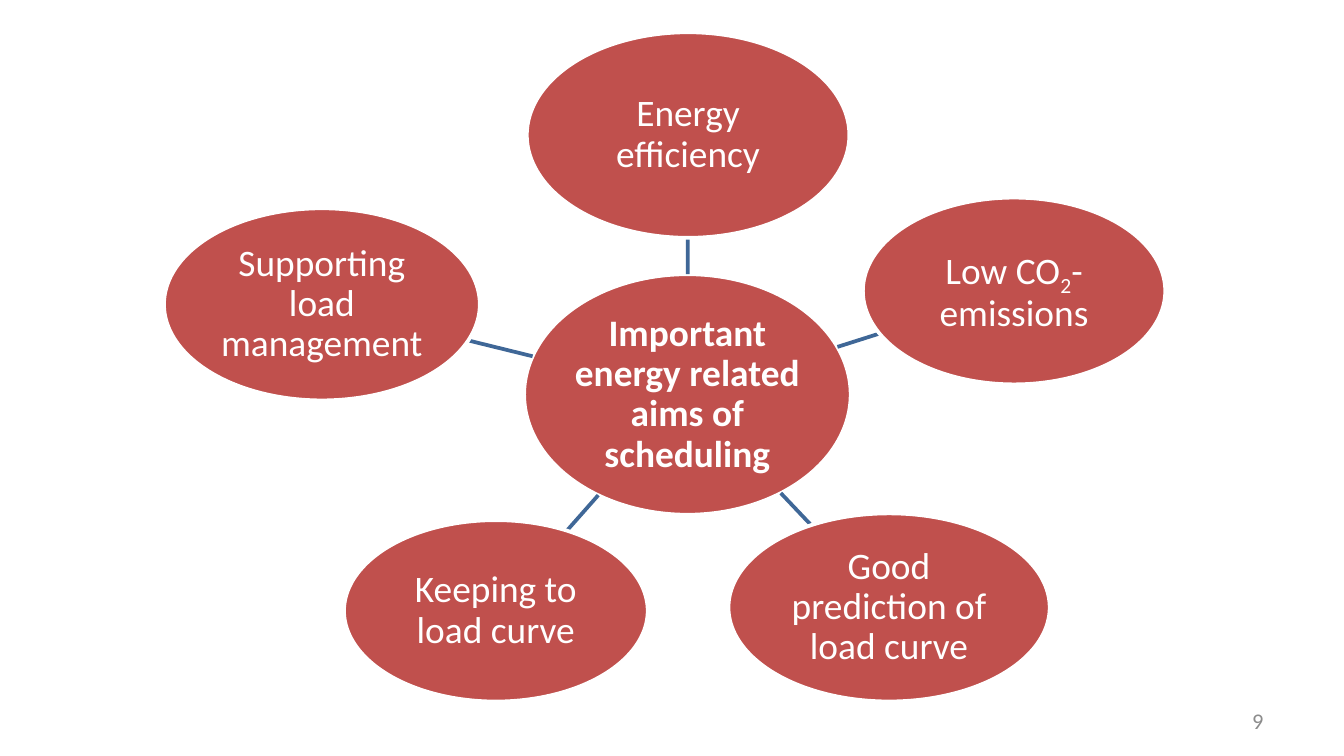
import math

import pptx
import pptx.dml.color
import pptx.enum.shapes
import pptx.enum.text
import pptx.oxml
import pptx.oxml.ns
import pptx.util

Inches = pptx.util.Inches
Pt = pptx.util.Pt
ALIGN = pptx.enum.text.PP_ALIGN

COLOURS = {"ellipse": "C0504D", "spoke": "3F6797", "white": "FFFFFF", "number": "8C8C8C"}
FONT = "Calibri"

# Boxes are left, top, width, height in inches; the diagram's parts are relative to its box.
DIAGRAM_BOX = (1.22, 0.24, 7.45, 4.98)
HUB = ("Important energy related aims of scheduling", (2.68, 1.80, 2.43, 1.79))
AIMS = [
    (["Energy efficiency"], (2.70, 0, 2.40, 1.53)),
    (["Low CO", "2", "-emissions"], (5.20, 1.23, 2.25, 1.39)),
    (["Good prediction of load curve"], (4.20, 3.58, 2.39, 1.40)),
    (["Keeping to load curve"], (1.34, 3.63, 2.26, 1.35)),
    (["Supporting load management"], (0, 1.31, 2.35, 1.43)),
]


def rgb(name):
    return pptx.dml.color.RGBColor.from_string(COLOURS[name])


def write_text(shape, parts, *, size, colour, align, bold=False, inset=0.01, line_spacing=None):
    """Write one paragraph; every second part is a subscript."""
    frame = shape.text_frame
    frame.word_wrap = True
    frame.vertical_anchor = pptx.enum.text.MSO_ANCHOR.MIDDLE
    frame.margin_left = frame.margin_right = Inches(inset)
    frame.margin_top = frame.margin_bottom = Inches(min(inset, 0.05))
    paragraph = frame.paragraphs[0]
    paragraph.alignment = align
    if line_spacing:
        paragraph.line_spacing = line_spacing
    for index, part in enumerate(parts):
        run = paragraph.add_run()
        run.text = part
        run.font.name = FONT
        run.font.size = Pt(size)
        run.font.bold = bold
        run.font.color.rgb = rgb(colour)
        if index % 2:
            run.font._element.set("baseline", "-25000")


def add_ellipse(slide, box, parts, bold=False):
    ellipse = slide.shapes.add_shape(
        pptx.enum.shapes.MSO_SHAPE.OVAL, *(Inches(length) for length in box))
    ellipse.shadow.inherit = False
    ellipse.fill.solid()
    ellipse.fill.fore_color.rgb = rgb("ellipse")
    ellipse.line.color.rgb = rgb("white")
    ellipse.line.width = Pt(2)
    write_text(ellipse, parts, size=20, colour="white", align=ALIGN.CENTER,
               bold=bold, line_spacing=0.9)


def centre(box):
    left, top, width, height = box
    return left + width / 2, top + height / 2


def edge_point(box, target):
    """Point where the ellipse in box meets the line from its centre to target."""
    x, y = centre(box)
    dx, dy = target[0] - x, target[1] - y
    scale = 1 / math.hypot(dx / (box[2] / 2), dy / (box[3] / 2))
    return x + dx * scale, y + dy * scale


def add_spoke(slide, hub_box, aim_box):
    ends = edge_point(hub_box, centre(aim_box)) + edge_point(aim_box, centre(hub_box))
    spoke = slide.shapes.add_connector(
        pptx.enum.shapes.MSO_CONNECTOR.STRAIGHT, *(Inches(length) for length in ends))
    spoke.line.color.rgb = rgb("spoke")
    spoke.line.width = Pt(2)
    properties = spoke._element.spPr
    properties.append(pptx.oxml.parse_xml(
        "<a:effectLst %s/>" % pptx.oxml.ns.nsdecls("a")))


def add_radial_diagram(slide, box):
    def place(part_box):
        left, top, width, height = part_box
        return box[0] + left, box[1] + top, width, height

    hub_text, hub_box = HUB
    add_ellipse(slide, place(hub_box), [hub_text], bold=True)
    for parts, aim_box in AIMS:
        add_spoke(slide, place(hub_box), place(aim_box))
        add_ellipse(slide, place(aim_box), parts)


def add_slide_number(slide, box, number):
    text_box = slide.shapes.add_textbox(*(Inches(length) for length in box))
    write_text(text_box, [number], size=12, colour="number", align=ALIGN.RIGHT, inset=0.1)


def main():
    presentation = pptx.Presentation()
    presentation.slide_width = Inches(10)
    presentation.slide_height = Inches(10) * 9 // 16
    slide = presentation.slides.add_slide(presentation.slide_layouts[6])
    add_slide_number(slide, (7.17, 5.21, 2.33, 0.3), "9")
    add_radial_diagram(slide, DIAGRAM_BOX)
    presentation.save("out.pptx")


if __name__ == "__main__":
    main()
